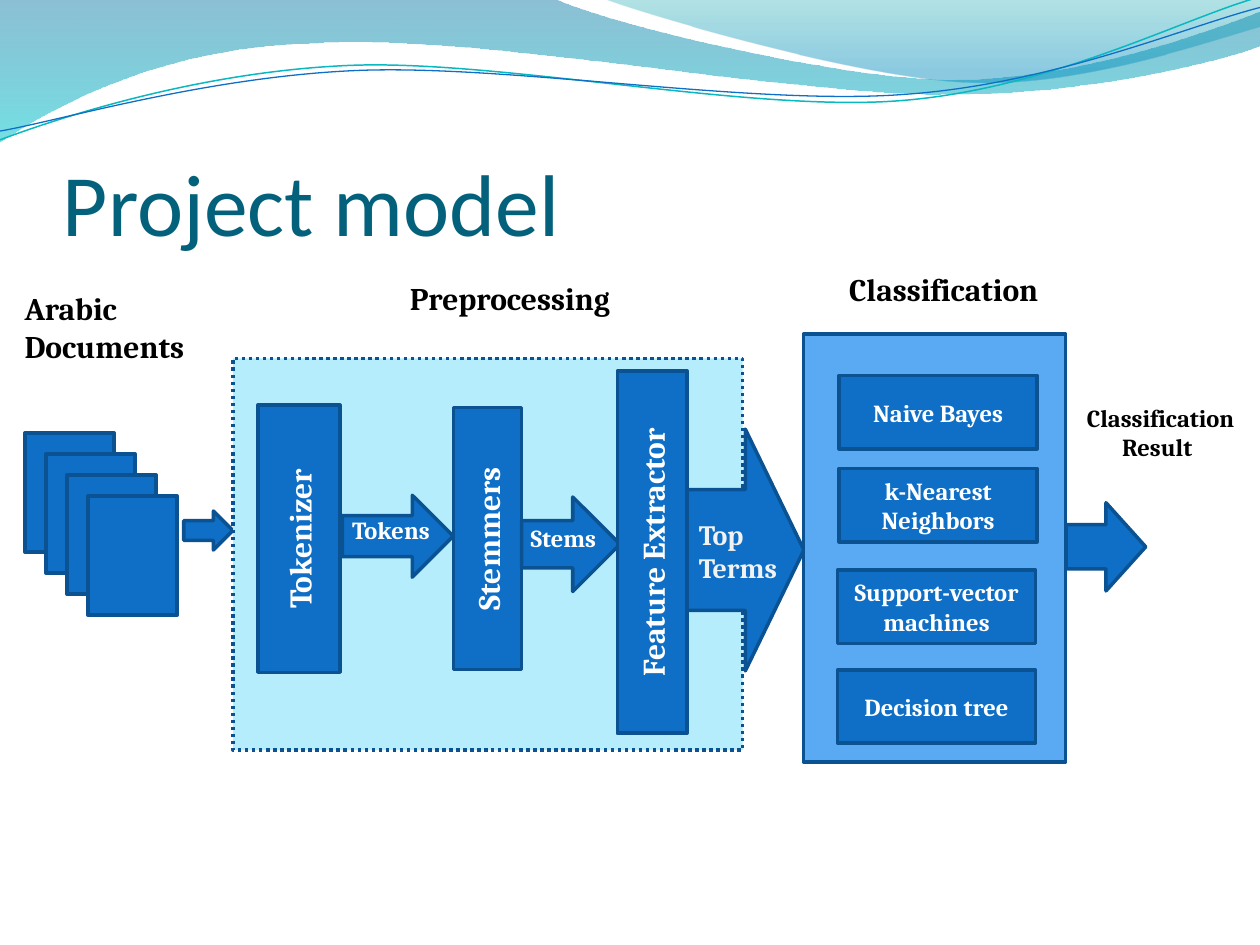
"""Build the project model slide: documents, preprocessing, classification, result."""
import math
from dataclasses import dataclass

from lxml import etree
from pptx import Presentation
from pptx.dml.color import RGBColor
from pptx.enum import dml, shapes, text
from pptx.oxml import ns
from pptx.util import Pt

RECTANGLE = shapes.MSO_SHAPE.RECTANGLE
ARROW = shapes.MSO_SHAPE.RIGHT_ARROW
LEFT, CENTER, RIGHT = text.PP_ALIGN.LEFT, text.PP_ALIGN.CENTER, text.PP_ALIGN.RIGHT
TOP, MIDDLE, BOTTOM = text.MSO_ANCHOR.TOP, text.MSO_ANCHOR.MIDDLE, text.MSO_ANCHOR.BOTTOM
INSETS = (7.2, 3.6, 7.2, 3.6)
TILT = 2.7


@dataclass(frozen=True)
class Theme:
    """Colours, fonts and type sizes of the slide."""
    title: str = "04617B"
    block: str = "0F6FC6"
    outline: str = "0B5292"
    preprocessing: str = "B5EDFD"
    classification: str = "59AAF2"
    light: str = "FFFFFF"
    soft: str = "F2F2F2"
    dark: str = "000000"
    wave_line: str = "0AB8BF"
    wide_wave: tuple = ((0, "0074A1", 45), (1, "00C6CF", 55))
    right_wave: tuple = ((0, "00A1A9", 30), (0.8, "008BBF", 45))
    title_font: str = "Calibri"
    body_font: str = "Cambria"
    title_size: float = 50
    heading: float = 18
    terms: float = 16
    label: float = 14
    border: float = 2


THEME = Theme()


def rgb(value):
    """Turn a hex string into a colour."""
    return RGBColor.from_string(value)


def write(shape, lines, size, color, align=CENTER, anchor=MIDDLE,
          font=THEME.body_font, bold=True, insets=INSETS):
    """Write one paragraph per line into a shape."""
    frame = shape.text_frame
    frame.word_wrap = True
    frame.vertical_anchor = anchor
    frame.margin_left, frame.margin_top, frame.margin_right, frame.margin_bottom = map(Pt, insets)
    for index, line in enumerate(lines):
        paragraph = frame.add_paragraph() if index else frame.paragraphs[0]
        paragraph.alignment = align
        run = paragraph.add_run()
        run.text = line
        run.font.name, run.font.size, run.font.bold = font, Pt(size), bold
        run.font.color.rgb = rgb(color)


def add_block(slide, kind, box, fill=THEME.block):
    """Add an outlined preset shape."""
    shape = slide.shapes.add_shape(kind, *map(Pt, box))
    shape.shadow.inherit = False
    shape.fill.solid()
    shape.fill.fore_color.rgb = rgb(fill)
    shape.line.color.rgb = rgb(THEME.outline)
    shape.line.width = Pt(THEME.border)
    return shape


def add_stage(slide, caption, box):
    """Add a tall block whose caption reads upwards."""
    shape = add_block(slide, RECTANGLE, box)
    write(shape, [caption], THEME.heading, THEME.light)
    shape.element.txBody.bodyPr.set("vert", "vert270")


def add_label(slide, lines, box, size, color=THEME.dark, align=LEFT, anchor=TOP, **style):
    """Add a text box."""
    shape = slide.shapes.add_textbox(*map(Pt, box))
    write(shape, lines, size, color, align, anchor, **style)
    return shape


def turn(point, center, degrees):
    """Turn a point clockwise around a center."""
    angle = math.radians(degrees)
    x, y = point[0] - center[0], point[1] - center[1]
    return (center[0] + x * math.cos(angle) - y * math.sin(angle),
            center[1] + x * math.sin(angle) + y * math.cos(angle))


def add_curve(slide, points, segments, close):
    """Add a freeform whose segments are lines of one point or curves of three."""
    points = [(Pt(x), Pt(y)) for x, y in points]
    builder = slide.shapes.build_freeform(*points[0])
    builder.add_line_segments(points[1:], close=close)
    shape = builder.convert_to_shape()
    shape.shadow.inherit = False
    lines = list(shape.element.spPr.iter(ns.qn("a:lnTo")))
    for kind in segments:
        group, lines = lines[:kind], lines[kind:]
        if kind == 3:
            curve = etree.Element(ns.qn("a:cubicBezTo"))
            group[0].addprevious(curve)
            for line in group:
                curve.append(line[0])
                line.getparent().remove(line)
    return shape


def add_wave(slide, stops, points, segments):
    """Add a closed wave with a translucent downward gradient."""
    shape = add_curve(slide, points, segments, True)
    shape.line.fill.background()
    shape.fill.gradient()
    shape.fill.gradient_angle = 270
    for stop, (position, color, opacity) in zip(shape.fill.gradient_stops, stops):
        stop.position = position
        stop.color.rgb = rgb(color)
    tones = shape.element.spPr.iter(ns.qn("a:srgbClr"))
    for tone, (position, color, opacity) in zip(tones, stops):
        etree.SubElement(tone, ns.qn("a:alpha")).set("val", str(opacity * 1000))


def add_ripple(slide, color, width, center, points):
    """Add an open wavy line, tilted around its center."""
    shape = add_curve(slide, [turn(point, center, TILT) for point in points], (3, 3, 3), False)
    shape.rotation = 360 - TILT
    shape.fill.background()
    shape.line.color.rgb = rgb(color)
    shape.line.width = Pt(width)


def add_header(slide):
    """Add the waves along the top and the title."""
    add_wave(slide, THEME.wide_wave, [
        (0, 0), (316.8, -0.7), (342.7, 12.2), (478.1, 45.4), (545.8, 45.4),
        (614.2, 45.4), (689.8, 18.7), (720, 6.5), (720.7, 25.9),
        (707.8, 31.7), (626.4, 54.7), (537.1, 54), (447.8, 54), (275, 20.2), (185, 24.5),
        (92.9, 25.9), (33.1, 59.8), (-0.7, 81.4)], (1, 3, 3, 1, 3, 3, 3))
    add_wave(slide, THEME.right_wave, [
        (344.9, -0.7), (366.5, 7.9), (491, 44.6), (553.7, 46.8),
        (616.3, 49.7), (691.9, 23), (720, 15.1), (720, 0)], (3, 3, 1))
    add_ripple(slide, THEME.wave_line, 0.85, (359.3, 41.4), [
        (0, 79.9), (34.6, 67), (113.8, 41), (199.4, 37.4), (284.4, 33.8),
        (427, 64.1), (513.4, 57.6), (599.8, 51.1), (675.4, 10.8), (718.6, -1.4)])
    add_ripple(slide, THEME.block, 0.75, (359.6, 42.5), [
        (0, 74.9), (33.8, 69.1), (118.1, 43.9), (203.8, 40.3), (290.2, 36.7),
        (429.8, 60.5), (516.2, 54), (601.9, 48.2), (677.5, 15.1), (720, 4.3)])
    add_label(slide, ["Project model"], (36, 55.4, 648, 90), THEME.title_size, THEME.title,
              anchor=BOTTOM, font=THEME.title_font, bold=False, insets=(0, 3.6, 0, 0))


def add_documents(slide):
    """Add the stack of documents and its arrow."""
    for index in range(4):
        add_block(slide, RECTANGLE, (14.2 + 12 * index, 247.5 + 12 * index, 51.1, 68))
    add_block(slide, ARROW, (105, 292, 28.1, 22.3))
    add_label(slide, ["Arabic", "Documents"], (2.2, 161.6, 187.9, 51.1), THEME.heading,
              insets=(11.8, 3.6, 7.2, 3.6))


def add_preprocessing(slide):
    """Add the preprocessing stages and the arrows between them."""
    panel = add_block(slide, RECTANGLE, (133.2, 204.8, 291.2, 223.9), THEME.preprocessing)
    panel.line.dash_style = dml.MSO_LINE.ROUND_DOT
    add_label(slide, ["Preprocessing"], (217.4, 155.9, 138.2, 28.8), THEME.heading, align=RIGHT)
    add_stage(slide, "Tokenizer", (147.4, 231.5, 46.8, 152.7))
    add_stage(slide, "Stemmers", (259.2, 233, 38.9, 149.6))
    for caption, arrow, box, size, color in (
            ("Tokens", (195.6, 283, 63.4, 46.8), (194.2, 290.9, 69.1, 24.5), THEME.label, THEME.light),
            ("Stems", (298.1, 284, 56.2, 54), (296.1, 295.4, 58.3, 24.5), THEME.label, THEME.light),
            ("Top Terms", (392.4, 245.2, 67, 138.2), (392.2, 292, 64.1, 46.1), THEME.terms, THEME.soft)):
        add_block(slide, ARROW, arrow)
        add_label(slide, [caption], box, size, color)
    add_stage(slide, "Feature Extractor", (352.8, 212, 39.8, 207))


def add_classification(slide):
    """Add the classifiers and the result."""
    add_block(slide, RECTANGLE, (459.2, 190.8, 149.6, 244.8), THEME.classification)
    add_label(slide, ["Classification"], (463, 150.5, 152.6, 34.6), THEME.heading, align=CENTER)
    for caption, left, top in (("Naive Bayes", 479.5, 214.6), ("k-Nearest Neighbors", 479.5, 267.8),
                               ("Support-vector machines", 478.6, 325.8), ("Decision tree", 478.6, 382.8)):
        write(add_block(slide, RECTANGLE, (left, top, 113.2, 41.9)), [caption], THEME.label, THEME.light)
    add_block(slide, ARROW, (609.3, 287.3, 45.4, 50.4))
    result = add_label(slide, ["Classification ", "Result"], (601.2, 226.8, 120.2, 41),
                       THEME.label, align=CENTER)
    for properties in result.element.iter(ns.qn("a:pPr")):
        properties.set("rtl", "1")


def main():
    """Build and save the presentation."""
    presentation = Presentation()
    presentation.slide_width, presentation.slide_height = Pt(720), Pt(540)
    slide = presentation.slides.add_slide(presentation.slide_layouts[6])
    for add_part in (add_header, add_documents, add_preprocessing, add_classification):
        add_part(slide)
    presentation.save("out.pptx")


if __name__ == "__main__":
    main()
